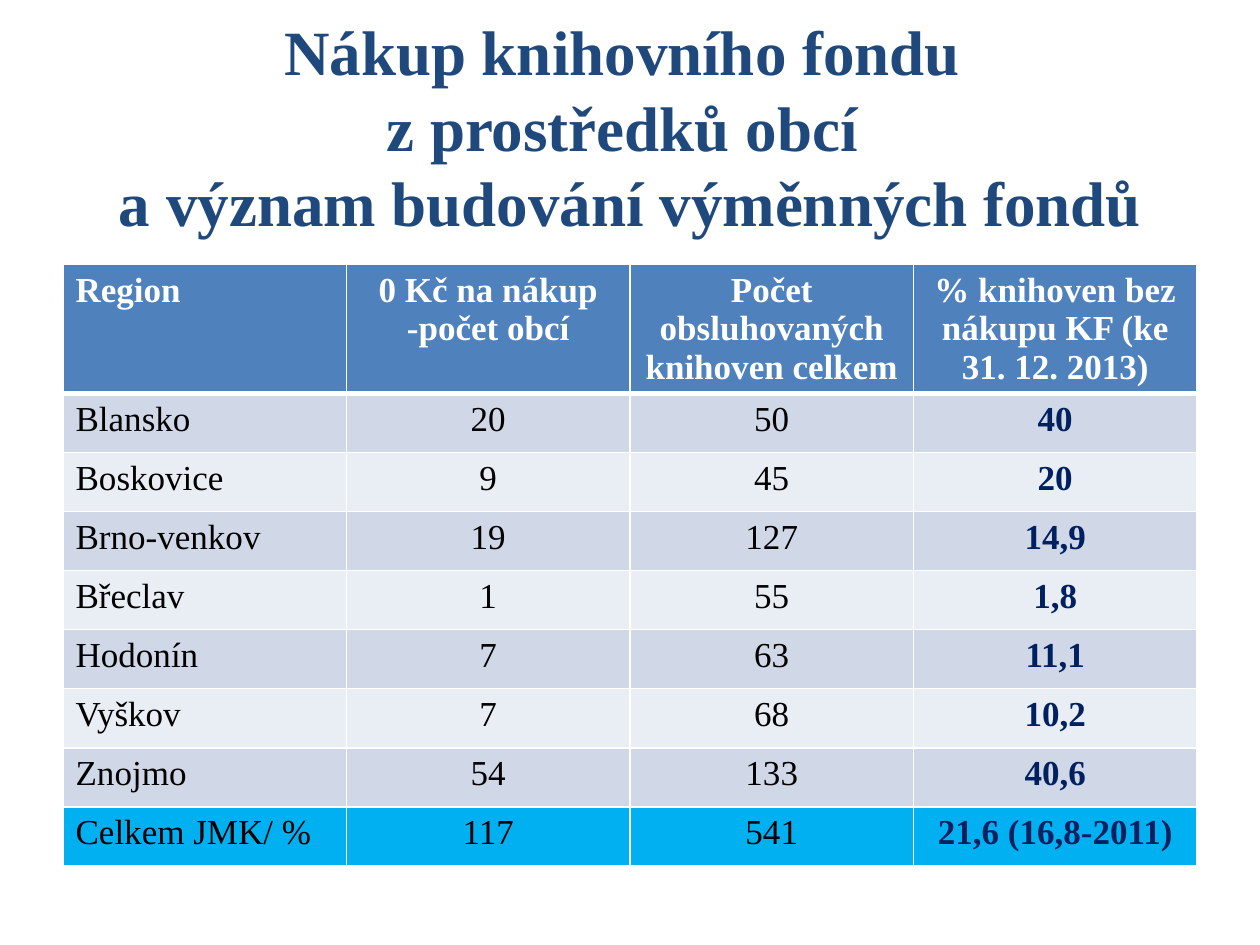
from dataclasses import dataclass

from lxml import etree
from pptx import Presentation
from pptx.dml.color import RGBColor
from pptx.enum.text import MSO_ANCHOR, MSO_AUTO_SIZE, PP_ALIGN
from pptx.oxml.ns import qn
from pptx.util import Cm, Pt

LEFT, CENTER = PP_ALIGN.LEFT, PP_ALIGN.CENTER
MIDDLE = MSO_ANCHOR.MIDDLE
NO_FIT = MSO_AUTO_SIZE.NONE
FONT = "Times New Roman"
WHITE, BLACK, NAVY = "FFFFFF", "000000", "002060"
BANDS = ("D0D8E8", "E9EDF4")
MARGIN, WIDTH = 1.27, 22.86
HEAD_H, ROW_H = 2.06, 1.19


@dataclass
class Row:
    texts: tuple[str, ...]
    fill: str
    color: str = BLACK
    last: str = NAVY
    bold: bool = False
    height: float = ROW_H
    rule: float = 1


HEAD = Row(
    ("Region", "0 Kč na nákup -počet obcí", "Počet obsluhovaných knihoven celkem",
     "% knihoven bez nákupu KF (ke 31. 12. 2013)"),
    "4F81BD", WHITE, WHITE, True, HEAD_H, 3,
)
REGIONS = (
    ("Blansko", "20", "50", "40"),
    ("Boskovice", "9", "45", "20"),
    ("Brno-venkov", "19", "127", "14,9"),
    ("Břeclav", "1", "55", "1,8"),
    ("Hodonín", "7", "63", "11,1"),
    ("Vyškov", "7", "68", "10,2"),
    ("Znojmo", "54", "133", "40,6"),
)
TOTAL = Row(("Celkem JMK/ %", "117", "541", "21,6 (16,8-2011)"), "00B0F0")


def rgb(code: str) -> RGBColor:
    return RGBColor.from_string(code)


def style(par, align, color: str, size: float, bold: bool) -> None:
    par.alignment = align
    form = {"name": FONT, "size": Pt(size), "bold": bold}
    for run in par.runs:
        for key, value in form.items():
            setattr(run.font, key, value)
        run.font.color.rgb = rgb(color)


def border(cell, side: str, width: float) -> None:
    line = etree.SubElement(cell._tc.get_or_add_tcPr(), qn(f"a:ln{side}"), w=str(Pt(width)))
    fill = etree.SubElement(line, qn("a:solidFill"))
    etree.SubElement(fill, qn("a:srgbClr"), val=WHITE)


def draw_title(title) -> None:
    title.left, title.top = Cm(MARGIN), Cm(0.76)
    title.width, title.height = Cm(WIDTH), Cm(3.56)
    frame = title.text_frame
    frame.auto_size, frame.vertical_anchor = NO_FIT, MIDDLE
    par = frame.paragraphs[0]
    par.text = "Nákup knihovního fondu \vz prostředků obcí \va význam budování výměnných fondů"
    par.line_spacing = Pt(43.2)
    style(par, CENTER, "1F497D", 36, True)


def draw_row(table, index: int, row: Row, above: float) -> None:
    """Fill one table row; above is the width of the rule over it."""
    table.rows[index].height = Cm(row.height)
    end = len(row.texts) - 1
    for col, text in enumerate(row.texts):
        cell = table.cell(index, col)
        for side, width in {"L": 1, "R": 1, "T": above, "B": row.rule}.items():
            border(cell, side, width)
        cell.fill.solid()
        cell.fill.fore_color.rgb = rgb(row.fill)
        cell.text = text
        color = row.last if col == end else row.color
        style(cell.text_frame.paragraphs[0], CENTER if col else LEFT,
              color, 20, row.bold or col == end)


def main() -> None:
    deck = Presentation()
    deck.slide_width, deck.slide_height = Cm(25.4), Cm(19.05)
    slide = deck.slides.add_slide(deck.slide_layouts[5])
    draw_title(slide.shapes.title)

    bands = [Row(texts, BANDS[i % 2]) for i, texts in enumerate(REGIONS)]
    rows = [HEAD, *bands, TOTAL]
    height = sum(row.height for row in rows)
    table = slide.shapes.add_table(
        len(rows), len(HEAD.texts), Cm(MARGIN), Cm(5.33), Cm(WIDTH), Cm(height)
    ).table
    above = 1
    for index, row in enumerate(rows):
        draw_row(table, index, row, above)
        above = row.rule
    deck.save("out.pptx")


if __name__ == "__main__":
    main()
